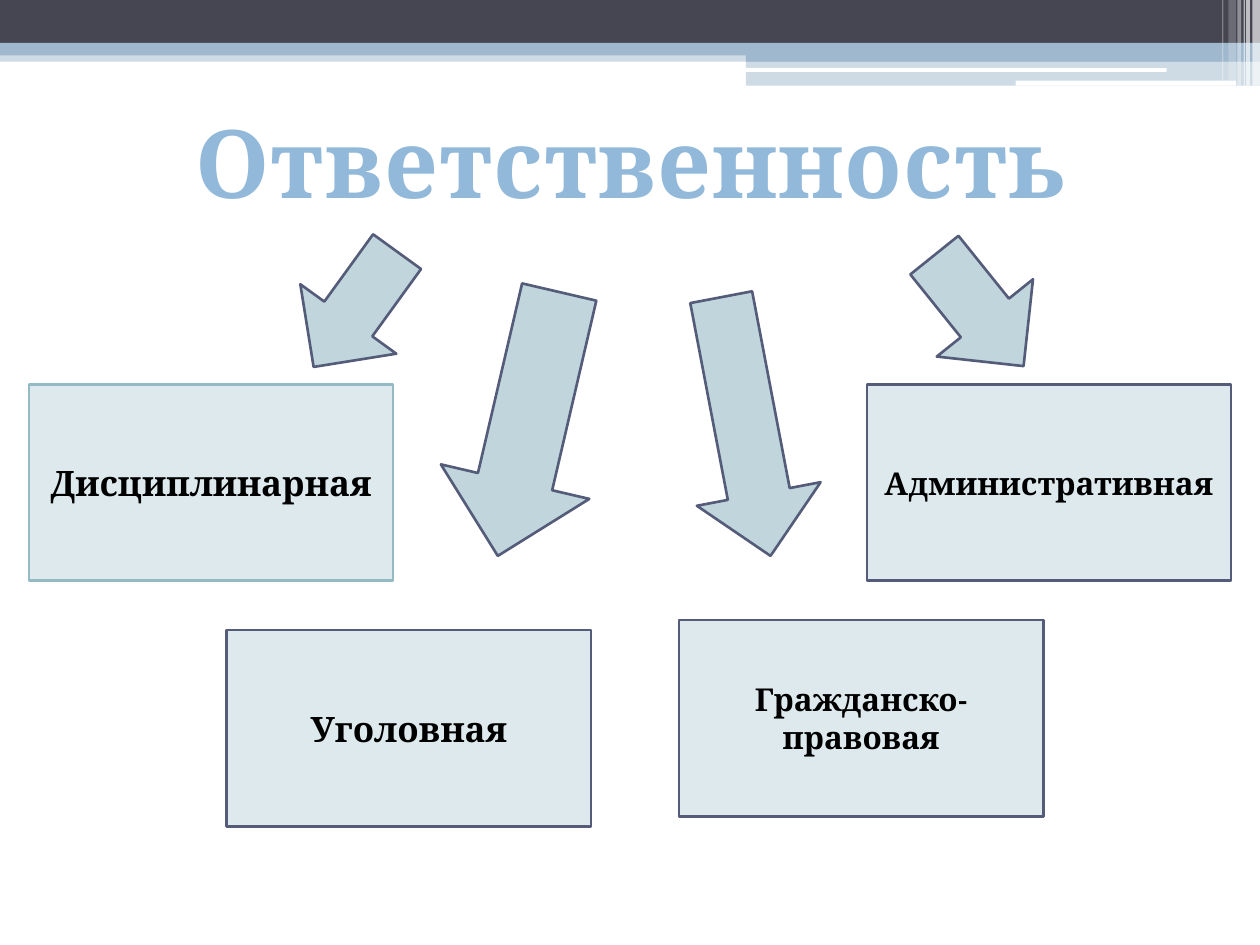
"""Build the slide on the four kinds of liability."""
import pptx
import pptx.dml.color
import pptx.enum.shapes
import pptx.enum.text
import pptx.oxml
import pptx.oxml.ns
import pptx.util
from pptx.util import Inches

RGBColor = pptx.dml.color.RGBColor
MSO_SHAPE = pptx.enum.shapes.MSO_SHAPE
WHITE = RGBColor(0xFF, 0xFF, 0xFF)
BLACK = RGBColor(0x00, 0x00, 0x00)
CHARCOAL = RGBColor(0x46, 0x46, 0x53)
BAND_BLUE = RGBColor(0x9F, 0xB8, 0xCD)
TITLE_BLUE = RGBColor(0x92, 0xB9, 0xDA)
BOX_FILL = RGBColor(0xDD, 0xE9, 0xEC)
ARROW_FILL = RGBColor(0xC0, 0xD6, 0xDC)
TEAL = RGBColor(0x94, 0xBA, 0xC3)
SLATE = RGBColor(0x54, 0x5C, 0x79)
FONT = "Cambria"

presentation = pptx.Presentation()
presentation.slide_width = Inches(10)
presentation.slide_height = Inches(7.5)
slide = presentation.slides.add_slide(presentation.slide_layouts[6])


def add_shape(kind, left, top, width, height, fill, line=None, opacity=100):
    shape = slide.shapes.add_shape(
        kind, Inches(left), Inches(top), Inches(width), Inches(height)
    )
    shape.shadow.inherit = False
    shape.fill.solid()
    shape.fill.fore_color.rgb = fill
    if opacity < 100:
        color = shape.fill._xPr.find(".//" + pptx.oxml.ns.qn("a:srgbClr"))
        namespace = pptx.oxml.ns.nsdecls("a")
        color.append(
            pptx.oxml.parse_xml(f'<a:alpha {namespace} val="{opacity * 1000}"/>')
        )
    if line is None:
        shape.line.fill.background()
    else:
        shape.line.color.rgb = line
        shape.line.width = pptx.util.Pt(1.5)
    return shape


def write_text(shape, text, size, color):
    shape.text_frame.text = text
    paragraph = shape.text_frame.paragraphs[0]
    paragraph.alignment = pptx.enum.text.PP_ALIGN.CENTER
    run = paragraph.runs[0]
    run.font.name = FONT
    run.font.size = pptx.util.Pt(size)
    run.font.bold = True
    run.font.color.rgb = color
    return run


bands = [
    (0, 0.4, 10, 0.09, BAND_BLUE, 50),
    (0, 0, 10, 0.34, CHARCOAL, 100),
    (0, 0.34, 10, 0.1, BAND_BLUE, 100),
    (5.92, 0.39, 4.08, 0.1, BAND_BLUE, 100),
    (5.92, 0.48, 4.08, 0.2, BAND_BLUE, 50),
]
for left, top, width, height, color, opacity in bands:
    add_shape(MSO_SHAPE.RECTANGLE, left, top, width, height, color, opacity=opacity)

for left, top, width, height in [(5.91, 0.54, 3.35, 0.03), (8.06, 0.64, 1.75, 0.04)]:
    add_shape(MSO_SHAPE.ROUNDED_RECTANGLE, left, top, width, height, WHITE)

stripes = [
    (9.94, 0.06, 0.68, 65),
    (9.89, 0.03, 0.68, 65),
    (9.87, 0.01, 0.68, 60),
    (9.82, 0.03, 0.68, 40),
    (9.75, 0.06, 0.64, 20),
    (9.7, 0.01, 0.64, 30),
]
for left, width, height, opacity in stripes:
    add_shape(MSO_SHAPE.RECTANGLE, left, 0, width, height, WHITE, opacity=opacity)

title = slide.shapes.add_textbox(Inches(1.41), Inches(0.78), Inches(7.2), Inches(1.01))
title.text_frame.word_wrap = False
title.text_frame.auto_size = pptx.enum.text.MSO_AUTO_SIZE.SHAPE_TO_FIT_TEXT
title_run = write_text(title, "Ответственность", 54, TITLE_BLUE)
title_run._r.get_or_add_rPr().set("spc", "50")

boxes = [
    (0.23, 3.05, "Дисциплинарная", 20, TEAL),
    (1.8, 5, "Уголовная", 20, SLATE),
    (5.39, 4.92, "Гражданско- правовая", 18, SLATE),
    (6.88, 3.05, "Административная", 18, SLATE),
]
for left, top, text, size, line in boxes:
    box = add_shape(MSO_SHAPE.RECTANGLE, left, top, 2.89, 1.56, BOX_FILL, line)
    box.text_frame.word_wrap = True
    box.text_frame.vertical_anchor = pptx.enum.text.MSO_ANCHOR.MIDDLE
    write_text(box, text, size, BLACK)

arrows = [
    (2.35, 1.89, 0.94, 1.13, 35.9),
    (3.59, 2.29, 1.21, 2.15, 13.1),
    (5.42, 2.34, 1, 2.09, 349.2),
    (7.28, 1.9, 0.98, 1.13, 321.2),
]
for left, top, width, height, rotation in arrows:
    arrow = add_shape(
        MSO_SHAPE.DOWN_ARROW, left, top, width, height, ARROW_FILL, SLATE
    )
    arrow.rotation = rotation

presentation.save("out.pptx")
